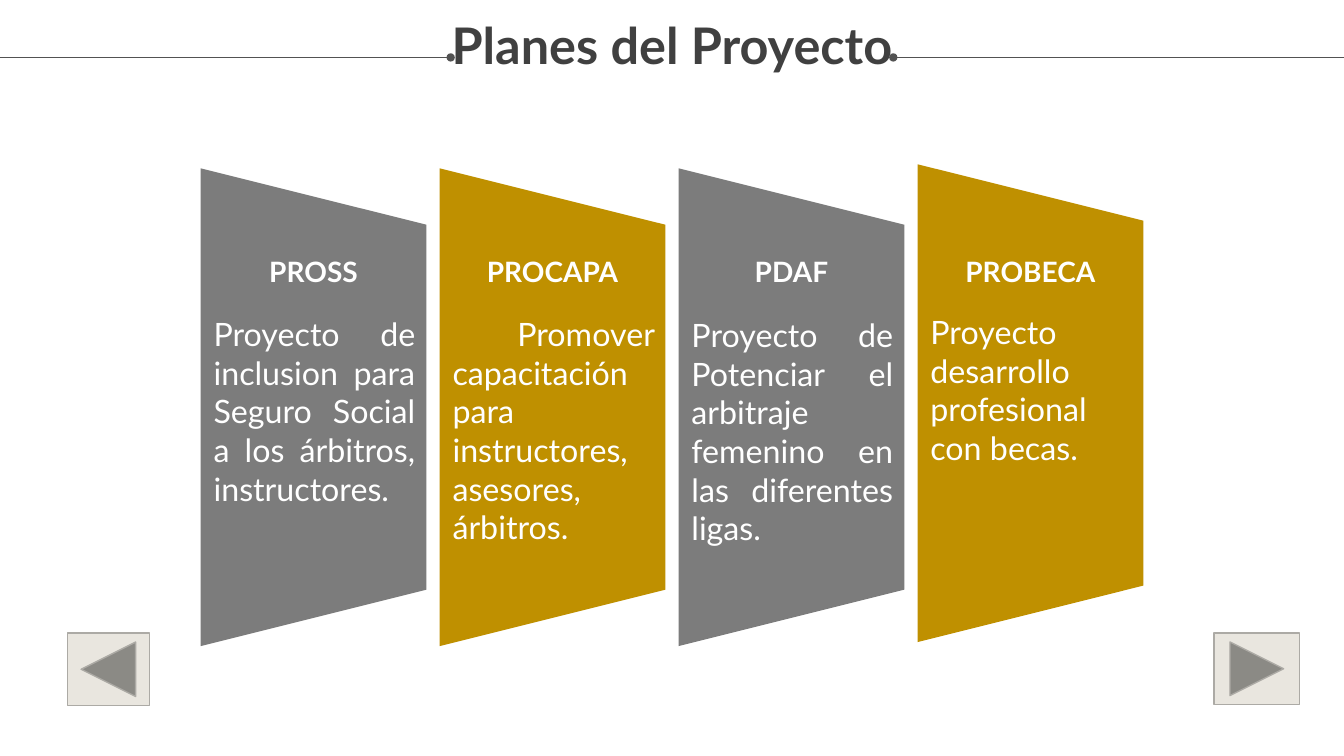
"""Build the "Planes del Proyecto" slide with four plan panels."""
from dataclasses import dataclass

from pptx import Presentation
from pptx import util as u
from pptx.dml.color import RGBColor
from pptx.enum import shapes, text
from pptx.oxml import parse_xml
from pptx.oxml.ns import nsdecls

COLORS = {
    "title": "404040", "rule": "525252", "gray": "7C7C7C", "gold": "BF9000",
    "white": "FFFFFF", "button": "E9E6DF", "button_line": "ACAAA5",
}
TITLE_FONT = {"name": "Lato", "size": u.Pt(36), "bold": True}
HEADING_FONT = {"name": "Lato", "size": u.Pt(20), "bold": True}
BODY_FONT = {"name": "Lato", "size": u.Pt(23), "bold": False}
NO_MARGINS = dict.fromkeys(("margin_left", "margin_top", "margin_right", "margin_bottom"), 0)
FIRST_PANEL_LEFT, PANEL_PITCH = 1.99, 2.37
PANEL_WIDTH, PANEL_HEIGHT = 2.24, 4.74
TEXT_WIDTH = 2.2
RULE_TOP = 0.57


@dataclass
class Plan:
    """One panel with its heading and description."""
    heading: str
    description: str
    color: str
    top: float = 1.67
    description_top: float = 3.07


@dataclass
class Button:
    """A navigation button."""
    kind: shapes.MSO_SHAPE
    left: float
    width: float
    height: float


PLANS = [
    Plan("PROSS", "Proyecto de inclusion para Seguro Social a los árbitros, instructores.", "gray"),
    Plan("PROCAPA", " Promover capacitación para instructores, asesores, árbitros.", "gold"),
    Plan("PDAF", "Proyecto de Potenciar el arbitraje femenino en las diferentes ligas.", "gray",
         description_top=3.08),
    Plan("PROBECA", "Proyecto desarrollo profesional con becas.", "gold",
         top=1.63, description_top=3.05),
]
BUTTONS = [
    Button(shapes.MSO_SHAPE.ACTION_BUTTON_BACK_OR_PREVIOUS, 0.67, 0.81, 0.72),
    Button(shapes.MSO_SHAPE.ACTION_BUTTON_FORWARD_OR_NEXT, 12.04, 0.85, 0.71),
]


def color(name: str) -> RGBColor:
    """Return the named colour."""
    return RGBColor.from_string(COLORS[name])


def apply(target, values: dict) -> None:
    """Set each attribute of the target from the given values."""
    for name, value in values.items():
        setattr(target, name, value)


def write(shape, content: str, font: dict, font_color: str, align, margins: dict) -> None:
    """Fill a shape with one formatted paragraph."""
    frame = shape.text_frame
    frame.text = content
    apply(frame, {"word_wrap": True, "vertical_anchor": text.MSO_ANCHOR.TOP, **margins})
    paragraph = frame.paragraphs[0]
    paragraph.alignment = align
    apply(paragraph.font, font)
    paragraph.font.color.rgb = color(font_color)


def add_title(slide) -> None:
    """Place and format the title."""
    title = slide.shapes.title
    apply(title, {"left": u.Inches(0.25), "top": u.Inches(0.21),
                  "width": u.Inches(12.83), "height": u.Inches(0.97)})
    write(title, "Planes del Proyecto", TITLE_FONT, "title", text.PP_ALIGN.CENTER, NO_MARGINS)
    title.text_frame.paragraphs[0].line_spacing = 0.9


def add_rule(slide, dot: float, edge: float) -> None:
    """Draw a title rule from its dot to the slide edge."""
    rule = slide.shapes.add_connector(
        shapes.MSO_CONNECTOR.STRAIGHT, u.Inches(dot), u.Inches(RULE_TOP),
        u.Inches(edge), u.Inches(RULE_TOP))
    rule.line.color.rgb = color("rule")
    rule.line.width = u.Pt(0.5)
    rule.line._get_or_add_ln().append(parse_xml(f'<a:headEnd {nsdecls("a")} type="oval"/>'))
    rule._element.spPr.append(parse_xml(f'<a:effectLst {nsdecls("a")}/>'))


def add_panel(slide, plan: Plan, left: float) -> None:
    """Draw a trapezoid turned on its side."""
    shift = (PANEL_HEIGHT - PANEL_WIDTH) / 2
    panel = slide.shapes.add_shape(
        shapes.MSO_SHAPE.TRAPEZOID, u.Inches(left - shift), u.Inches(plan.top + shift),
        u.Inches(PANEL_HEIGHT), u.Inches(PANEL_WIDTH))
    panel.rotation = 90
    panel.shadow.inherit = False
    panel.fill.solid()
    panel.fill.fore_color.rgb = color(plan.color)
    panel.line.fill.background()


def add_plan(slide, plan: Plan, left: float) -> None:
    """Draw a panel with its heading and description."""
    add_panel(slide, plan, left)
    heading = slide.shapes.add_textbox(
        u.Inches(left + 0.02), u.Inches(2.52), u.Inches(TEXT_WIDTH), u.Inches(0.34))
    write(heading, plan.heading, HEADING_FONT, "white", text.PP_ALIGN.CENTER, NO_MARGINS)
    description = slide.shapes.add_textbox(
        u.Inches(left + 0.03), u.Inches(plan.description_top),
        u.Inches(TEXT_WIDTH), u.Inches(2.42))
    write(description, plan.description, BODY_FONT, "white", text.PP_ALIGN.JUSTIFY, {})


def add_button(slide, button: Button) -> None:
    """Draw a navigation button."""
    shape = slide.shapes.add_shape(
        button.kind, u.Inches(button.left), u.Inches(6.28),
        u.Inches(button.width), u.Inches(button.height))
    shape.shadow.inherit = False
    shape.fill.solid()
    shape.fill.fore_color.rgb = color("button")
    shape.line.color.rgb = color("button_line")
    shape.line.width = u.Pt(1)


def main() -> None:
    """Build and save the presentation."""
    presentation = Presentation()
    presentation.slide_width = u.Inches(13.33)
    presentation.slide_height = u.Inches(7.5)
    slide = presentation.slides.add_slide(presentation.slide_layouts.get_by_name("Title Only"))
    add_title(slide)
    add_rule(slide, 4.47, 0)
    add_rule(slide, 8.86, 13.33)
    for index, plan in enumerate(PLANS):
        add_plan(slide, plan, FIRST_PANEL_LEFT + index * PANEL_PITCH)
    for button in BUTTONS:
        add_button(slide, button)
    presentation.save("out.pptx")


if __name__ == "__main__":
    main()
